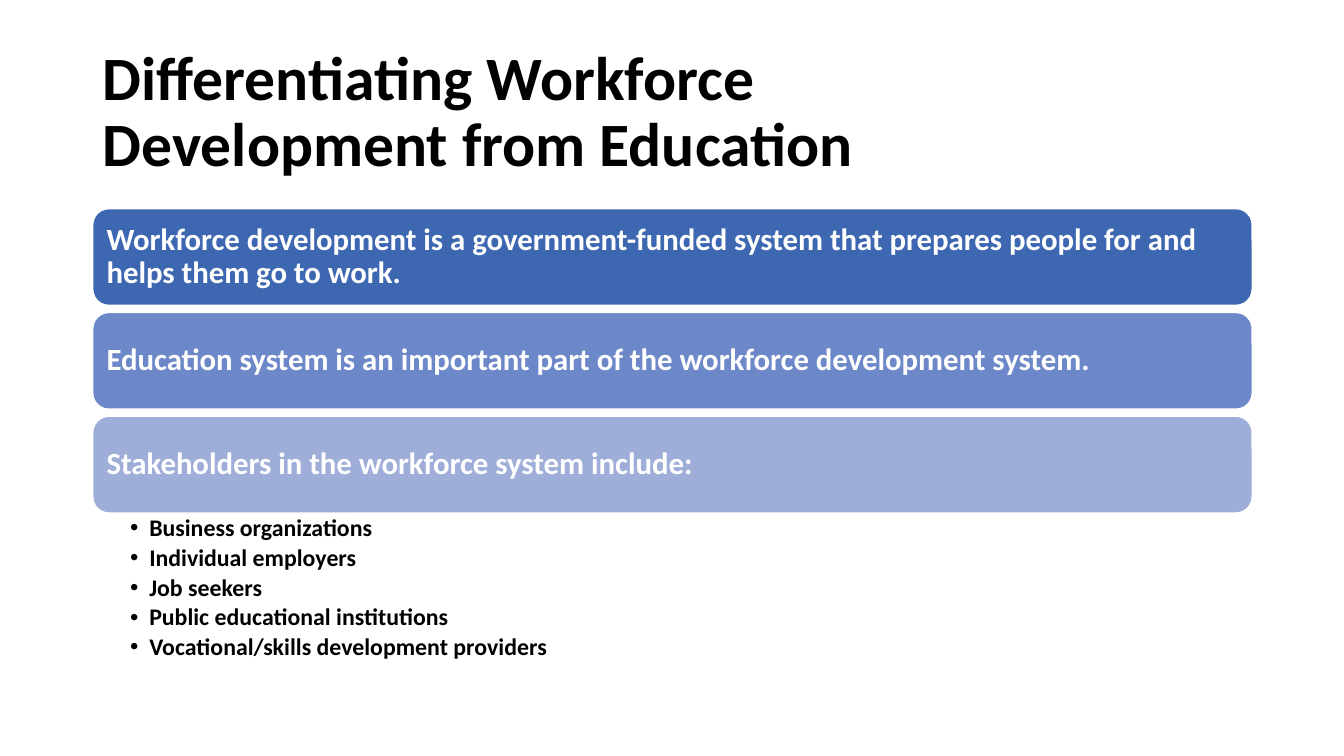
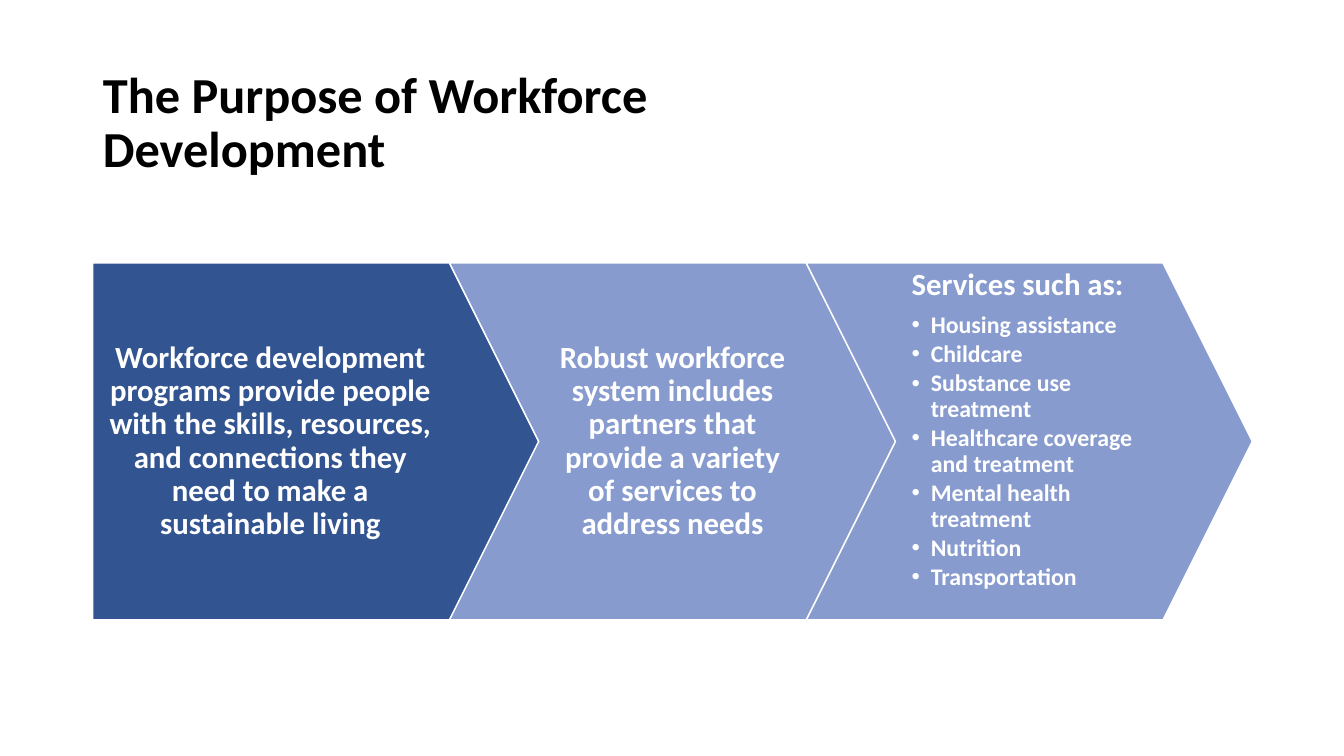
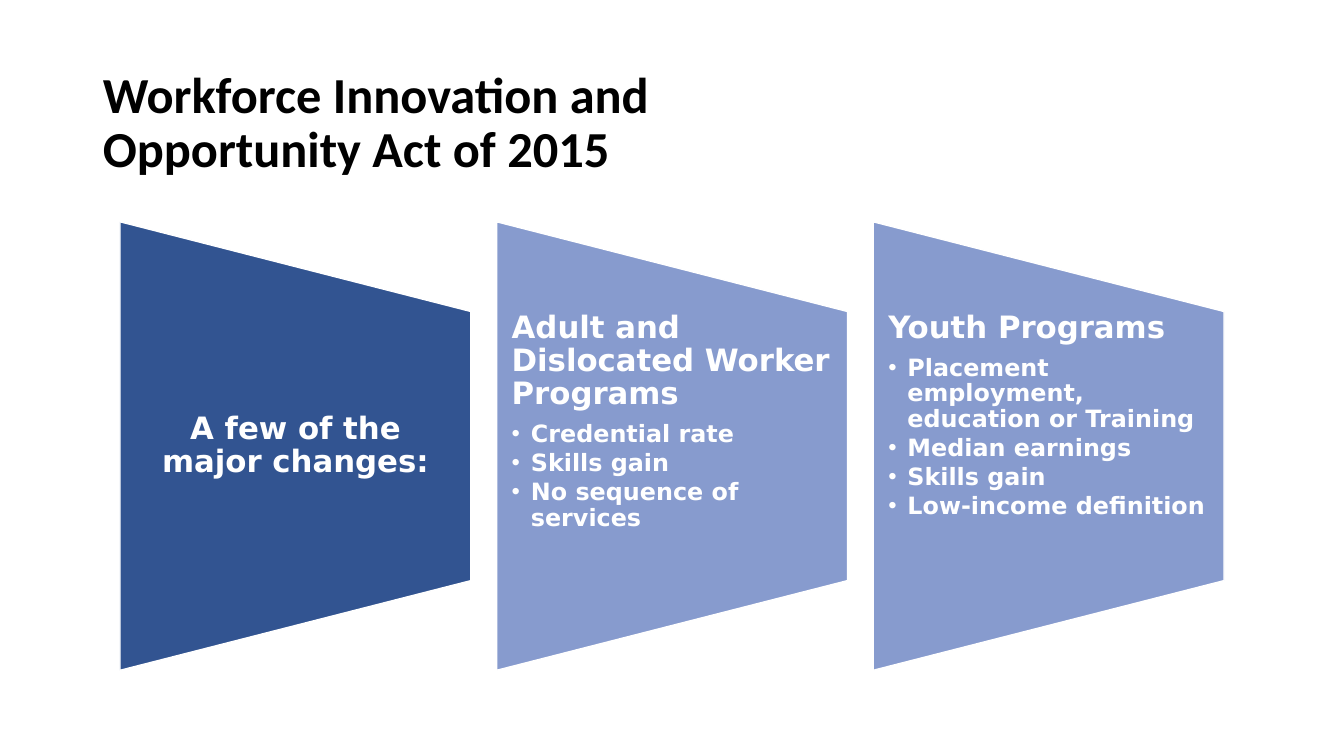
from lxml import etree
from pptx import Presentation
from pptx.dml.color import RGBColor
from pptx.enum.shapes import MSO_SHAPE
from pptx.enum.text import MSO_ANCHOR, MSO_AUTO_SIZE, PP_ALIGN
from pptx.oxml.ns import qn
from pptx.util import Emu, Pt

ROUNDED = MSO_SHAPE.ROUNDED_RECTANGLE
PENTAGON = MSO_SHAPE.PENTAGON
CHEVRON = MSO_SHAPE.CHEVRON
TRAPEZOID = MSO_SHAPE.FLOWCHART_MANUAL_OPERATION
MIDDLE, TOP = MSO_ANCHOR.MIDDLE, MSO_ANCHOR.TOP
LEFT, CENTER = PP_ALIGN.LEFT, PP_ALIGN.CENTER
NO_FIT = MSO_AUTO_SIZE.NONE

EMU_PER_PX = 9144
BULLET_INDENT = 19
SIDES = ("left", "top", "width", "height")
MARGINS = ("margin_left", "margin_top", "margin_right", "margin_bottom")
COLORS = {
    "ink": "000000",
    "white": "FFFFFF",
    "navy": "325491",
    "periwinkle": "879BCE",
    "band_dark": "3E67B2",
    "band_mid": "6C88C8",
    "band_light": "9FAED8",
}
STYLES = {
    "title_large": {"size": 44, "color": "ink", "after": 0},
    "title": {"size": 36, "color": "ink", "after": 0},
    "statement": {"size": 22, "color": "white", "after": 7.7},
    "service": {"size": 17, "color": "white", "after": 2.4, "bullet": "•"},
    "stakeholder": {"size": 17, "color": "ink", "after": 2.9, "bullet": "•"},
}
BAND_INSETS = (9, 9, 9, 9)
TITLE_INSETS = (10, 5, 10, 5)
LIST_INSETS = (37, 3, 17, 3)
PENTAGON_INSETS = (16, 6, 62, 6)
CHEVRON_INSETS = (16, 6, 16, 6)
CARD_INSETS = (15, 0, 15, 0)


def px(length):
    """Turn pixels into EMU."""
    return Emu(round(length * EMU_PER_PX))


def color(name):
    """Look up a named colour."""
    return RGBColor.from_string(COLORS[name])


def set_bullet(para, mark):
    """Give a paragraph a hanging bullet, or none."""
    props = para._p.get_or_add_pPr()
    indent = px(BULLET_INDENT) if mark else 0
    props.set("marL", str(indent))
    props.set("indent", str(-indent))
    if mark:
        etree.SubElement(props, qn("a:buChar")).set("char", mark)
    else:
        etree.SubElement(props, qn("a:buNone"))


def write(box, lines, insets, face="Calibri", anchor=MIDDLE, align=LEFT):
    """Fill a box with (style, text) lines."""
    frame = box.text_frame
    frame.text = "\n".join(text for _, text in lines)
    frame_format = {"word_wrap": True, "auto_size": NO_FIT, "vertical_anchor": anchor}
    frame_format.update(zip(MARGINS, map(px, insets)))
    for name, value in frame_format.items():
        setattr(frame, name, value)
    for para, (style_name, _) in zip(frame.paragraphs, lines):
        style = STYLES[style_name]
        para_format = {"alignment": align, "line_spacing": 0.9,
                       "space_before": Pt(0), "space_after": Pt(style["after"])}
        for name, value in para_format.items():
            setattr(para, name, value)
        set_bullet(para, style.get("bullet"))
        for span in para.runs:
            span_format = {"name": face, "size": Pt(style["size"]), "bold": True}
            for name, value in span_format.items():
                setattr(span.font, name, value)
            span.font.color.rgb = color(style["color"])


def place(page, holder, area):
    """Move a placeholder to an area, in front of the other shapes."""
    for side, length in zip(SIDES, area):
        setattr(holder, side, px(length))
    page.shapes.element.append(holder.element)


def add_panel(page, kind, area, fill):
    """Add a filled shape with a white outline."""
    panel = page.shapes.add_shape(kind, *map(px, area))
    panel.shadow.inherit = False
    panel.fill.solid()
    panel.fill.fore_color.rgb = color(fill)
    panel.line.color.rgb = color("white")
    panel.line.width = Pt(1)
    return panel


def add_page(deck, layout, title, area, style="title"):
    """Add a page with its title."""
    page = deck.slides.add_slide(deck.slide_layouts.get_by_name(layout))
    place(page, page.shapes.title, area)
    write(page.shapes.title, [(style, title)], TITLE_INSETS)
    return page


def listing(heading, items):
    """Make a heading line followed by bullet lines."""
    return [("statement", heading)] + [("service", item) for item in items]


def add_bands(page, area, statements, stakeholders):
    """Stack statement bands above a bulleted list."""
    left, top, width, height = area
    band_height, pitch = 96, 103
    fills = ("band_dark", "band_mid", "band_light")
    for index, (fill, text) in enumerate(zip(fills, statements)):
        band = add_panel(page, ROUNDED, (left, top + index * pitch, width, band_height), fill)
        write(band, [("statement", text)], BAND_INSETS)
    used = (len(statements) - 1) * pitch + band_height
    body = page.placeholders[1]
    place(page, body, (left, top + used, width, height - used))
    write(body, [("stakeholder", item) for item in stakeholders], LIST_INSETS, anchor=TOP)


def add_process(page, area, steps, services):
    """Interlock a pentagon and two chevrons, the last holding a list."""
    left, top, width, height = area
    step_width = width / 2.6
    point = height / 4
    kinds = (PENTAGON, CHEVRON, CHEVRON)
    fills = ("navy", "periwinkle", "periwinkle")
    panels = []
    for index, (kind, fill) in enumerate(zip(kinds, fills)):
        step_left = left + index * step_width * 0.8
        panel = add_panel(page, kind, (step_left, top, step_width, height), fill)
        panel.adjustments[0] = 0.25
        panels.append(panel)
    for panel, text, insets in zip(panels, steps, (PENTAGON_INSETS, CHEVRON_INSETS)):
        write(panel, [("statement", text)], insets, align=CENTER)
    body = page.placeholders[1]
    place(page, body, (step_left + point, top, step_width - 2 * point, height))
    write(body, services, CHEVRON_INSETS, anchor=TOP)


def add_cards(page, area, lead, lists):
    """Set three sideways trapezoids in a row: a lead and two lists."""
    left, top, width, height = area
    card_width = 348
    pitch = (width - card_width) / 2
    turn = (height - card_width) / 2
    text_areas = []
    for index, fill in enumerate(("navy", "periwinkle", "periwinkle")):
        card_left = left + index * pitch
        card = add_panel(page, TRAPEZOID, (card_left - turn, top + turn, height, card_width), fill)
        card.rotation = 270
        text_areas.append((card_left, top + height * 0.2, card_width, height * 0.6))
    lead_box = page.shapes.add_textbox(*map(px, text_areas[0]))
    write(lead_box, [("statement", lead)], CARD_INSETS, "DejaVu Sans", align=CENTER)
    for number, (text_area, lines) in enumerate(zip(text_areas[1:], lists), 1):
        body = page.placeholders[number]
        place(page, body, text_area)
        write(body, lines, CARD_INSETS, "DejaVu Sans", TOP)


def main():
    """Build and save the deck."""
    deck = Presentation()
    deck.slide_width, deck.slide_height = px(1333), px(750)
    title_area = (92, 61, 1150, 124)

    page = add_page(deck, "Title and Content",
                    "Differentiating Workforce\vDevelopment from Education",
                    (92, 40, 1150, 145), "title_large")
    add_bands(page, (92, 207, 1150, 460), [
        "Workforce development is a government-funded system that prepares people "
        "for and helps them go to work.",
        "Education system is an important part of the workforce development system.",
        "Stakeholders in the workforce system include:",
    ], [
        "Business organizations",
        "Individual employers",
        "Job seekers",
        "Public educational institutions",
        "Vocational/skills development providers",
    ])

    page = add_page(deck, "Title and Content",
                    "The Purpose of Workforce\vDevelopment", title_area)
    add_process(page, (92, 261, 1150, 354), [
        "Workforce development programs provide people with the skills, resources, "
        "and connections they need to make a sustainable living",
        "Robust workforce system includes partners that provide a variety of "
        "services to address needs",
    ], listing("Services such as:", [
        "Housing assistance",
        "Childcare",
        "Substance use treatment",
        "Healthcare coverage and treatment",
        "Mental health treatment",
        "Nutrition",
        "Transportation",
    ]))

    page = add_page(deck, "Two Content",
                    "Workforce Innovation and\vOpportunity Act of 2015", title_area)
    add_cards(page, (119, 220, 1095, 445), "A few of the major changes:", [
        listing("Adult and Dislocated Worker Programs", [
            "Credential rate",
            "Skills gain",
            "No sequence of services",
        ]),
        listing("Youth Programs", [
            "Placement employment, education or Training",
            "Median earnings",
            "Skills gain",
            "Low-income definition",
        ]),
    ])
    deck.save("out.pptx")


if __name__ == "__main__":
    main()
